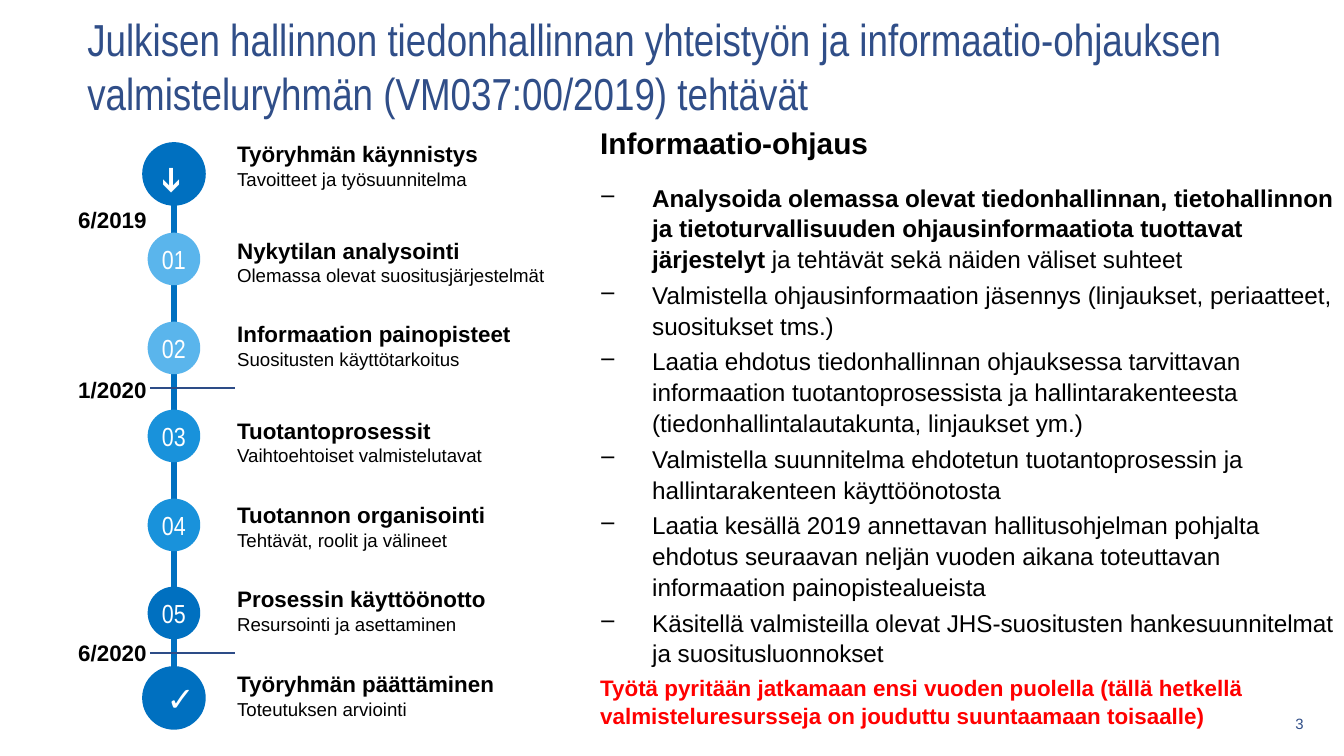
from pptx import Presentation
from pptx.dml.color import RGBColor
from pptx.enum.shapes import MSO_CONNECTOR, MSO_SHAPE
from pptx.enum.text import MSO_ANCHOR, PP_ALIGN
from pptx.oxml.ns import qn
from pptx.util import Pt
from lxml.etree import SubElement

TITLE = ("Julkisen hallinnon tiedonhallinnan yhteistyön ja informaatio-ohjauksen "
         "valmisteluryhmän (VM037:00/2019) tehtävät")
HEAD = "Informaatio-ohjaus"
TASKS = [  # bold part, plain part
    ("Analysoida olemassa olevat tiedonhallinnan, tietohallinnon ja "
     "tietoturvallisuuden ohjausinformaatiota tuottavat järjestelyt ",
     "ja tehtävät sekä näiden väliset suhteet"),
    ("", "Valmistella ohjausinformaation jäsennys (linjaukset, periaatteet, "
     "suositukset tms.)"),
    ("", "Laatia ehdotus tiedonhallinnan ohjauksessa tarvittavan informaation "
     "tuotantoprosessista ja hallintarakenteesta (tiedonhallintalautakunta, "
     "linjaukset ym.)"),
    ("", "Valmistella suunnitelma ehdotetun tuotantoprosessin ja "
     "hallintarakenteen käyttöönotosta"),
    ("", "Laatia kesällä 2019 annettavan hallitusohjelman pohjalta ehdotus "
     "seuraavan neljän vuoden aikana toteuttavan informaation painopistealueista"),
    ("", "Käsitellä valmisteilla olevat JHS-suositusten hankesuunnitelmat ja "
     "suositusluonnokset"),
]
NOTE = ("Työtä pyritään jatkamaan ensi vuoden puolella (tällä hetkellä "
        "valmisteluresursseja on jouduttu suuntaamaan toisaalle)")
STEPS = [  # mark, colour, circle centre y, label top, heading, detail
    ("➔", "blue", 174, 134, "Työryhmän käynnistys", "Tavoitteet ja työsuunnitelma"),
    ("01", "pale", 259, 230, "Nykytilan analysointi",
     "Olemassa olevat suositusjärjestelmät"),
    ("02", "pale", 348, 314, "Informaation painopisteet", "Suositusten käyttötarkoitus"),
    ("03", "mid", 436, 410, "Tuotantoprosessit", "Vaihtoehtoiset valmistelutavat"),
    ("04", "mid", 525, 495, "Tuotannon organisointi", "Tehtävät, roolit ja välineet"),
    ("05", "blue", 613, 579, "Prosessin käyttöönotto", "Resursointi ja asettaminen"),
    ("✓", "blue", 698, 664, "Työryhmän päättäminen", "Toteutuksen arviointi"),
]
DATES = [("6/2019", 200), ("1/2020", 370), ("6/2020", 633)]  # text, top
RULES = [388, 653]
COLORS = {"navy": "304E88", "rule": "2D4C87", "blue": "0070C0", "mid": "1992DB",
          "pale": "5AB5EC", "black": "000000", "red": "FF0000", "white": "FFFFFF"}
AXIS = 174
BIG, SMALL = 58, 47


def px(n):
    return round(n * 914400 / 134.4)


def rgb(name):
    return RGBColor.from_string(COLORS[name])


def style(par, size, color="black", bold=False, face="Arial"):
    font = par.font
    font.size, font.bold, font.name = Pt(size), bold, face
    font.color.rgb = rgb(color)


def box(left, top, wide, high, wrap=True):
    frame = slide.shapes.add_textbox(px(left), px(top), px(wide), px(high)).text_frame
    frame.word_wrap = wrap
    return frame


def line(x1, y1, x2, y2, color, width):
    wire = slide.shapes.add_connector(MSO_CONNECTOR.STRAIGHT, px(x1), px(y1), px(x2), px(y2))
    wire.line.color.rgb = rgb(color)
    wire.line.width = Pt(width)
    SubElement(wire._element.spPr, qn("a:effectLst"))


def dash(par):
    """Give the paragraph a hanging dash bullet."""
    props = par._p.get_or_add_pPr()
    props.set("marL", str(px(52)))
    props.set("indent", str(-px(52)))
    SubElement(props, qn("a:buChar")).set("char", "‒")


def circle(mark, color, mid):
    number = mark.isdigit()
    size = SMALL if number else BIG
    dot = slide.shapes.add_shape(MSO_SHAPE.OVAL, px(AXIS - size / 2),
                                 px(mid - size / 2), px(size), px(size))
    dot.shadow.inherit = False
    dot.fill.solid()
    dot.fill.fore_color.rgb = dot.line.color.rgb = rgb(color)
    dot.line.width = Pt(3)
    dot.rotation = 90 if mark == "➔" else 0
    frame = dot.text_frame
    frame.word_wrap = not number
    frame.vertical_anchor = MSO_ANCHOR.MIDDLE
    par = frame.paragraphs[0]
    par.text, par.alignment = mark, PP_ALIGN.CENTER
    style(par, 14 if number else 18, "white", face="Arial Narrow" if number else "Arial")


deck = Presentation()
deck.slide_width, deck.slide_height = px(1344), px(756)
slide = deck.slides.add_slide(deck.slide_layouts[6])

frame = box(74, 27, 1232, 77)
frame.vertical_anchor = MSO_ANCHOR.MIDDLE
frame.text = TITLE
style(frame.paragraphs[0], 24, "navy", face="Arial Narrow")

frame = box(587, 116, 763, 527)
frame.text = HEAD
style(frame.paragraphs[0], 16, bold=True)
frame.paragraphs[0].space_after = Pt(11)
for strong, plain in TASKS:
    par = frame.add_paragraph()
    par.space_after = Pt(2.5)
    dash(par)
    style(par, 13)
    if strong:
        run = par.add_run()
        run.text, run.font.bold = strong, True
    par.add_run().text = plain
par = frame.add_paragraph()
par.text = NOTE
style(par, 12, "red", True)
for par in frame.paragraphs:
    par.line_spacing = 1.06

frame = box(1247, 708, 70, 32)
frame.vertical_anchor = MSO_ANCHOR.MIDDLE
frame.text = "3"
frame.paragraphs[0].alignment = PP_ALIGN.RIGHT
style(frame.paragraphs[0], 8, "navy")

line(AXIS, STEPS[0][2] + BIG / 2, AXIS, STEPS[-1][2] - BIG / 2, "blue", 2.75)
for y in RULES:
    line(150, y, 235, y, "rule", 0.75)
for mark, color, mid, top, head, detail in STEPS:
    circle(mark, color, mid)
    frame = box(224, top, 340, 63, False)
    frame.text = head + "\n" + detail
    style(frame.paragraphs[0], 12, bold=True)
    style(frame.paragraphs[1], 10)
for date, top in DATES:
    frame = box(65, top, 95, 40, False)
    frame.text = date
    style(frame.paragraphs[0], 12, bold=True)

deck.save("out.pptx")
